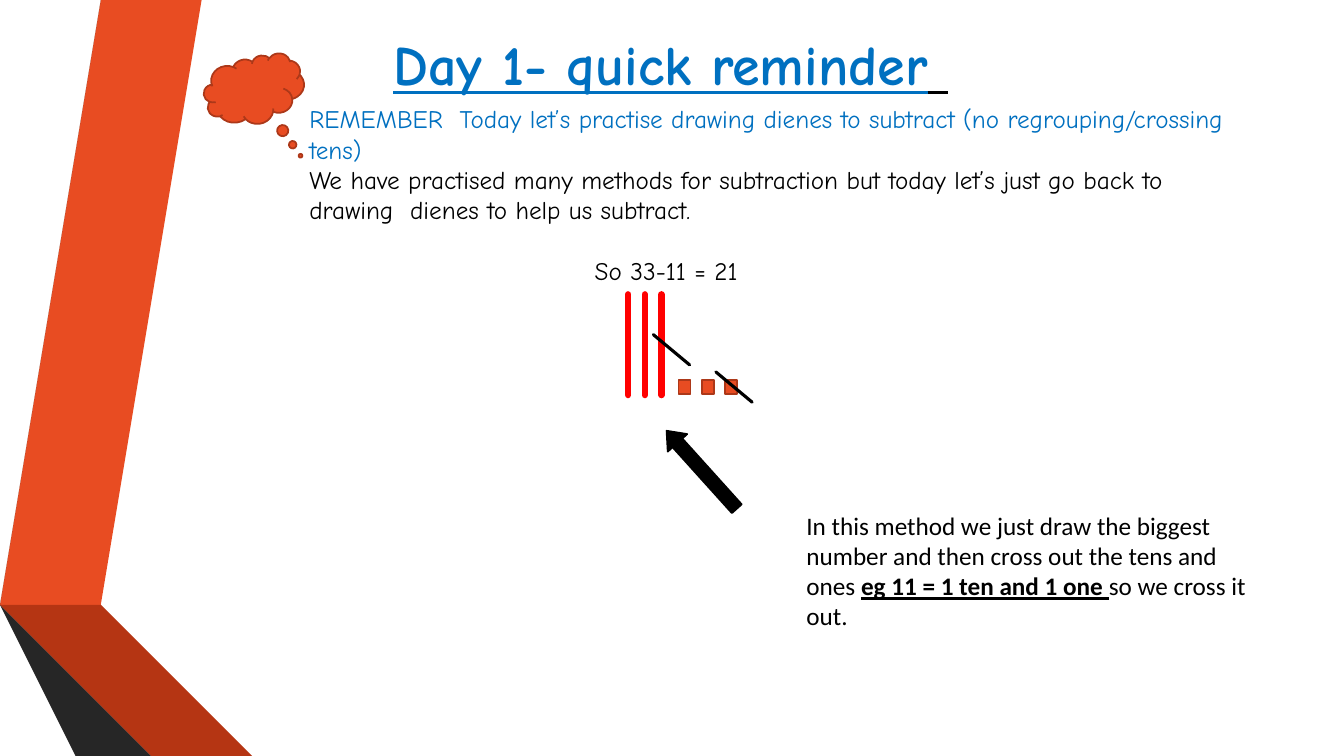
from pptx import Presentation
from pptx.dml.color import RGBColor
from pptx.enum.shapes import MSO_CONNECTOR, MSO_SHAPE
from pptx.enum.text import MSO_ANCHOR, PP_ALIGN
from pptx.oxml.ns import qn
from pptx.util import Inches, Pt
from lxml.etree import SubElement

BLACK = RGBColor(0x00, 0x00, 0x00)
BLUE = RGBColor(0x00, 0x70, 0xC0)
RED = RGBColor(0xFF, 0x00, 0x00)
ORANGE = RGBColor(0xE8, 0x4C, 0x22)
RUST = RGBColor(0xAC, 0x38, 0x19)
BRICK = RGBColor(0xB5, 0x35, 0x13)
MAROON = RGBColor(0x78, 0x23, 0x0D)
GREY = RGBColor(0x59, 0x59, 0x59)
DARK = RGBColor(0x40, 0x40, 0x40)
COAL = RGBColor(0x26, 0x26, 0x26)

COMIC = "Comic Neue"
PLAIN = "Calibri"

RIBBON = [
    (ORANGE, [(0.5, 5.78), (0.77, 5.83), (1.73, 0), (1.45, 0)]),
    (GREY, [(1.39, 0), (1.11, 0), (0.16, 5.73), (0.44, 5.77)]),
    (COAL, [(0.16, 5.73), (1.45, 7.5), (1.51, 7.5)]),
    (MAROON, [(0.5, 5.79), (2.08, 7.5), (2.14, 7.5)]),
    (BRICK, [(0.5, 5.79), (2.14, 7.5), (2.83, 7.5), (0.77, 5.83), (0.5, 5.78)]),
    (DARK, [(2.02, 7.5), (0.48, 5.83), (0.43, 5.78), (0.44, 5.77), (0.16, 5.73), (1.51, 7.5)]),
]


def add_text(slide, box, paras, **frame):
    area = slide.shapes.add_textbox(*map(Inches, box)).text_frame
    for name, value in {"word_wrap": True, **frame}.items():
        setattr(area, name, value)
    for count, (runs, form) in enumerate(paras):
        para = area.add_paragraph() if count else area.paragraphs[0]
        for name, value in form.items():
            setattr(para, name, value)
        for text, color, font in runs:
            run = para.add_run()
            run.text = text
            run.font.color.rgb = color
            for name, value in font.items():
                setattr(run.font, name, value)
    return area


def add_block(slide, kind, box, fill, edge, turn=0, bends=()):
    block = slide.shapes.add_shape(kind, *map(Inches, box))
    block.shadow.inherit = False
    block.rotation = turn
    block.fill.solid()
    block.fill.fore_color.rgb = fill
    block.line.color.rgb = edge
    block.line.width = Pt(1.25)
    for count, bend in enumerate(bends):
        block.adjustments[count] = bend


def add_stroke(slide, left, top, wide, high, color, width):
    ends = map(Inches, (left, top, left + wide, top + high))
    stroke = slide.shapes.add_connector(MSO_CONNECTOR.STRAIGHT, *ends)
    stroke.line.color.rgb = color
    stroke.line.width = Pt(width)
    stroke.line._ln.set("cap", "rnd")
    SubElement(stroke._element.spPr, qn("a:effectLst"))


def draw_ribbon(slide, left, top):
    for color, points in RIBBON:
        spots = [(left + x, top + y) for x, y in points]
        pen = slide.shapes.build_freeform(*spots[0], scale=Inches(1))
        pen.add_line_segments(spots[1:], close=True)
        band = pen.convert_to_shape()
        band.shadow.inherit = False
        band.fill.solid()
        band.fill.fore_color.rgb = color
        band.line.fill.background()


def draw_title(slide, box):
    font = {"name": COMIC, "size": Pt(40), "bold": True, "underline": True}
    runs = [("Day 1- quick reminder", BLUE, font), (" ", BLACK, font)]
    add_text(slide, box, [(runs, {"alignment": PP_ALIGN.CENTER})],
             vertical_anchor=MSO_ANCHOR.TOP, margin_top=Inches(0.24))


def draw_lesson(slide, box):
    font = {"name": COMIC, "size": Pt(18)}
    first = "REMEMBER  Today let’s practise drawing dienes to subtract (no regrouping/crossing tens)"
    second = ("We have practised many methods for subtraction but today let’s just go back to "
              "drawing  dienes to help us subtract.")
    area = add_text(slide, box, [
        ([(first, BLUE, font)], {}),
        ([(second, BLACK, font)], {}),
        ([("So 33-11 = 21", BLACK, font)], {"space_before": Pt(21.7)}),
    ])
    area.paragraphs[2]._p.get_or_add_pPr().set("marL", str(Inches(2.83)))


def draw_dienes(slide, left, top):
    for count in range(3):
        add_stroke(slide, left + count * 0.165, top, 0, 1, RED, 4.5)
    for count in range(3):
        box = (left + 0.5 + count * 0.23, top + 0.85, 0.12, 0.14)
        add_block(slide, MSO_SHAPE.RECTANGLE, box, ORANGE, RUST)
    for x, y in ((0.87, 0.77), (0.25, 0.4)):
        add_stroke(slide, left + x, top + y, 0.36, 0.3, BLACK, 2.25)
    add_block(slide, MSO_SHAPE.UP_ARROW, (left + 0.6, top + 1.22, 0.26, 1.04),
              BLACK, BLACK, 318, (0.5, 0.621))


def draw_method(slide, box):
    font = {"name": PLAIN, "size": Pt(18)}
    strong = {**font, "bold": True, "underline": True}
    add_text(slide, box, [([
        ("In this method we just draw the biggest number and then cross out the tens and ones ", BLACK, font),
        ("eg 11 = 1 ten and 1 one ", BLACK, strong),
        ("so we cross it out.", BLACK, font),
    ], {})])


def main():
    deck = Presentation()
    deck.slide_width = Inches(13.33)
    deck.slide_height = Inches(7.5)
    slide = deck.slides.add_slide(deck.slide_layouts[6])
    draw_ribbon(slide, 0, 0)
    draw_title(slide, (0.9, 0.05, 11.5, 1.7))
    draw_lesson(slide, (2.97, 0.98, 9.52, 1.92))
    add_block(slide, MSO_SHAPE.CLOUD_CALLOUT, (2.02, 0.56, 1, 0.67),
              ORANGE, RUST, 352.8, (0.376, 1.049))
    draw_dienes(slide, 6.23, 2.92)
    draw_method(slide, (7.9, 5.01, 4.68, 1.31))
    deck.save("out.pptx")


if __name__ == "__main__":
    main()
